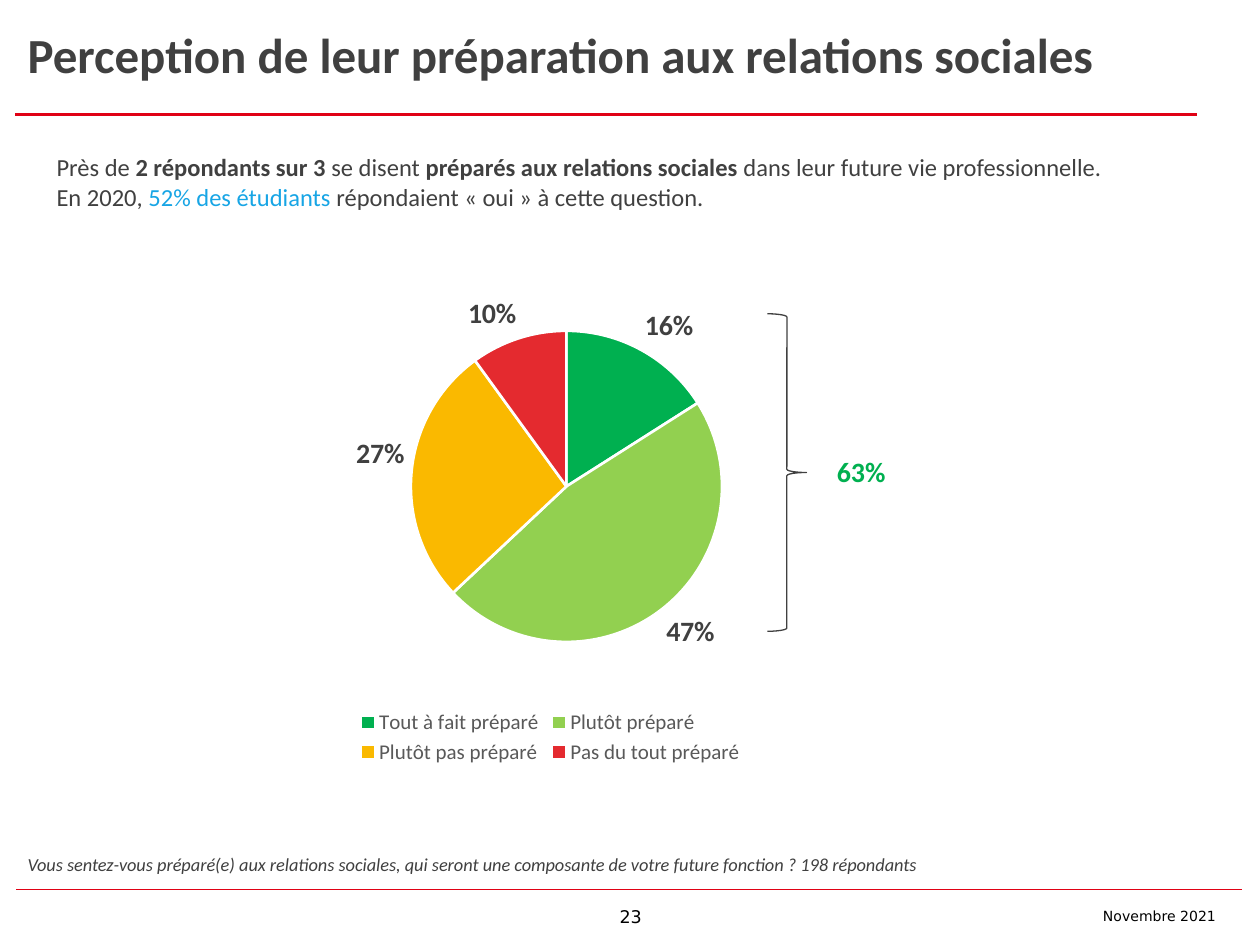
from dataclasses import dataclass

from lxml.etree import SubElement
from pptx import Presentation
from pptx.chart.data import CategoryChartData
from pptx.dml.color import RGBColor
from pptx.enum.chart import XL_CHART_TYPE as ChartType
from pptx.enum.chart import XL_LABEL_POSITION as LabelPosition
from pptx.enum.chart import XL_LEGEND_POSITION as LegendPosition
from pptx.enum.shapes import MSO_CONNECTOR as Connector
from pptx.enum.shapes import MSO_SHAPE as Shape
from pptx.enum.text import MSO_ANCHOR as Anchor
from pptx.enum.text import PP_ALIGN as Align
from pptx.oxml.ns import qn
from pptx.util import Inches, Pt

BLACK = RGBColor(0x00, 0x00, 0x00)
WHITE = RGBColor(0xFF, 0xFF, 0xFF)
INK = RGBColor(0x40, 0x40, 0x40)
GREY = RGBColor(0x59, 0x59, 0x59)
RED = RGBColor(0xE0, 0x01, 0x15)
BLUE = RGBColor(0x17, 0xA5, 0xE5)
GREEN = RGBColor(0x00, 0xB0, 0x50)
LIME = RGBColor(0x92, 0xD0, 0x50)
AMBER = RGBColor(0xFA, 0xB9, 0x00)
CRIMSON = RGBColor(0xE4, 0x2A, 0x2F)

COLUMNS, ROWS = 100, 75
WIDTH, HEIGHT = Inches(10), Inches(7.5)


@dataclass(frozen=True)
class Area:
    column: float
    row: float
    columns: float
    rows: float

    def lengths(self) -> tuple:
        return (across(self.column), down(self.row),
                across(self.columns), down(self.rows))


@dataclass(frozen=True)
class Span:
    text: str
    changes: tuple = ()


@dataclass(frozen=True)
class TextBlock:
    area: Area
    paras: tuple
    size: float
    color: RGBColor = INK
    font: str = "Calibri"
    bold: bool = False
    italic: bool = False
    align: Align = Align.LEFT
    anchor: Anchor = Anchor.TOP


@dataclass(frozen=True)
class Rule:
    start: float
    end: float
    row: float
    weight: float


@dataclass(frozen=True)
class Slice:
    label: str
    share: float
    color: RGBColor


BOLD = (("bold", True),)

RULES = (Rule(1.2, 95, 9.1, 2), Rule(1.3, 98.6, 70.6, 0.5))

BLOCKS = (
    TextBlock(Area(46.9, 71.4, 6.3, 2.7), ((Span("23"),),), 10, BLACK,
              "DejaVu Sans", align=Align.CENTER),
    TextBlock(Area(70.7, 71.5, 26.8, 2.4), ((Span("Novembre 2021"),),), 8, BLACK,
              "DejaVu Sans", align=Align.RIGHT),
    TextBlock(Area(1.2, 0.5, 94.1, 7.6),
              ((Span("Perception de leur préparation aux relations sociales"),),),
              28, bold=True, anchor=Anchor.MIDDLE),
    TextBlock(Area(1.2, 67.2, 98.8, 2.8),
              ((Span("Vous sentez-vous préparé(e) aux relations sociales, qui seront "
                     "une composante de votre future fonction ? 198 répondants"),),),
              10.5, italic=True),
    TextBlock(Area(3.5, 11.6, 92.9, 5.7), (
        (Span("Près de "), Span("2 répondants sur 3 ", BOLD), Span("se disent "),
         Span("préparés aux relations sociales ", BOLD),
         Span("dans leur future vie professionnelle.")),
        (Span("En 2020, "), Span("52% des étudiants ", (("color", BLUE),)),
         Span("répondaient « oui » à cette question.")),
    ), 14),
    TextBlock(Area(64.8, 35.6, 7.1, 3.7), ((Span("63%"),),), 16, GREEN,
              bold=True, align=Align.CENTER),
)

SLICES = (
    Slice("Tout à fait préparé", 0.16, GREEN),
    Slice("Plutôt préparé", 0.47, LIME),
    Slice("Plutôt pas préparé", 0.27, AMBER),
    Slice("Pas du tout préparé", 0.1, CRIMSON),
)

CHART_AREA = Area(18.5, 23.3, 50.4, 37.8)
PLOT_SHARES = {"x": 0.28, "y": 0.05, "w": 0.49, "h": 0.71}
BRACE_AREA = Area(60.9, 24.9, 3.1, 25.2)


def across(columns: float) -> int:
    return round(WIDTH * columns / COLUMNS)


def down(rows: float) -> int:
    return round(HEIGHT * rows / ROWS)


def format_font(font, formats: dict) -> None:
    for name, value in formats.items():
        if name == "color":
            font.color.rgb = value
        else:
            setattr(font, name, value)


def draw_rule(page, rule: Rule) -> None:
    line = page.shapes.add_connector(
        Connector.STRAIGHT, across(rule.start), down(rule.row),
        across(rule.end), down(rule.row))
    line.line.color.rgb = RED
    line.line.width = Pt(rule.weight)
    SubElement(line._element.spPr, qn("a:effectLst"))


def draw_text(page, block: TextBlock) -> None:
    frame = page.shapes.add_textbox(*block.area.lengths()).text_frame
    frame.word_wrap = True
    frame.vertical_anchor = block.anchor
    formats = {"size": Pt(block.size), "name": block.font, "color": block.color,
               "bold": block.bold, "italic": block.italic}
    for index, spans in enumerate(block.paras):
        para = frame.add_paragraph() if index else frame.paragraphs[0]
        para.alignment = block.align
        for span in spans:
            run = para.add_run()
            run.text = span.text
            format_font(run.font, formats | dict(span.changes))


def place_plot(chart) -> None:
    plot_area = chart._chartSpace.chart.plotArea
    for old in plot_area.findall(qn("c:layout")):
        plot_area.remove(old)
    layout = SubElement(plot_area, qn("c:layout"))
    plot_area.insert(0, layout)
    manual = SubElement(layout, qn("c:manualLayout"))
    settings = {"layoutTarget": "inner", "xMode": "edge", "yMode": "edge"} | PLOT_SHARES
    for name, value in settings.items():
        SubElement(manual, qn(f"c:{name}")).set("val", str(value))


def draw_pie(page, area: Area, slices: tuple) -> None:
    data = CategoryChartData(number_format="0%")
    data.categories = [part.label for part in slices]
    data.add_series("Series 1", [part.share for part in slices])
    chart = page.shapes.add_chart(ChartType.PIE, *area.lengths(), data).chart
    chart.has_title = False
    format_font(chart.font, {"size": Pt(10), "name": "Calibri", "color": BLACK})
    chart.has_legend = True
    chart.legend.position = LegendPosition.BOTTOM
    chart.legend.include_in_layout = False
    format_font(chart.legend.font, {"size": Pt(12), "name": "Calibri", "color": GREY})
    plot = chart.plots[0]
    plot.vary_by_categories = True
    series = plot.series[0]
    for index, part in enumerate(slices):
        look = series.points[index].format
        look.fill.solid()
        look.fill.fore_color.rgb = part.color
        look.line.color.rgb = WHITE
        look.line.width = Pt(1.5)
    labels = series.data_labels
    settings = {"show_value": True, "number_format": "0%",
                "number_format_is_linked": False, "position": LabelPosition.OUTSIDE_END}
    for name, value in settings.items():
        setattr(labels, name, value)
    format_font(labels.font, {"size": Pt(16), "name": "Calibri", "color": INK, "bold": True})
    place_plot(chart)


def draw_brace(page, area: Area) -> None:
    brace = page.shapes.add_shape(Shape.RIGHT_BRACE, *area.lengths())
    brace.shadow.inherit = False
    brace.fill.background()
    brace.line.color.rgb = INK
    brace.line.width = Pt(0.75)


def main() -> None:
    deck = Presentation()
    deck.slide_width, deck.slide_height = WIDTH, HEIGHT
    page = deck.slides.add_slide(deck.slide_layouts[6])
    for rule in RULES:
        draw_rule(page, rule)
    draw_pie(page, CHART_AREA, SLICES)
    draw_brace(page, BRACE_AREA)
    for block in BLOCKS:
        draw_text(page, block)
    deck.save("out.pptx")


if __name__ == "__main__":
    main()
